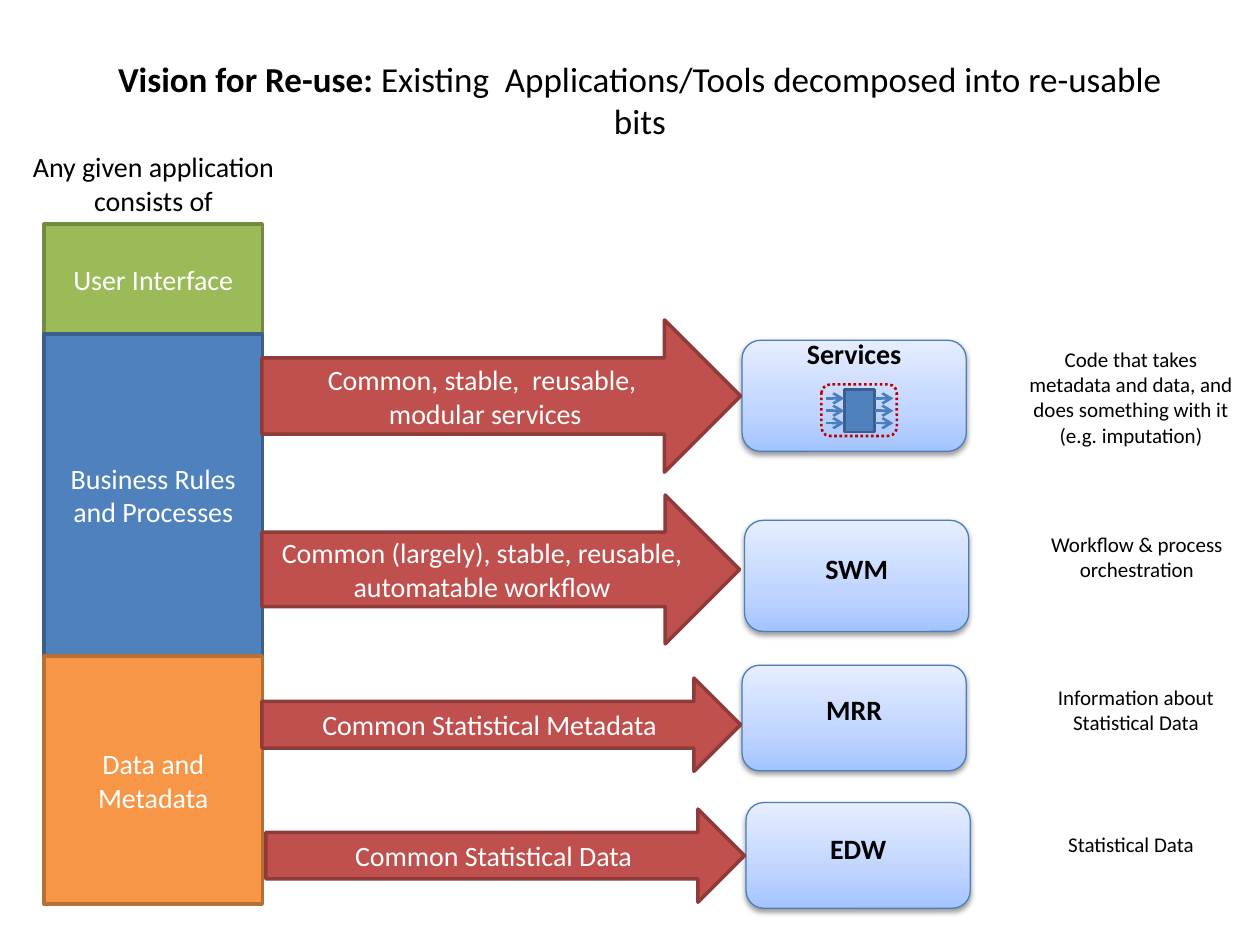
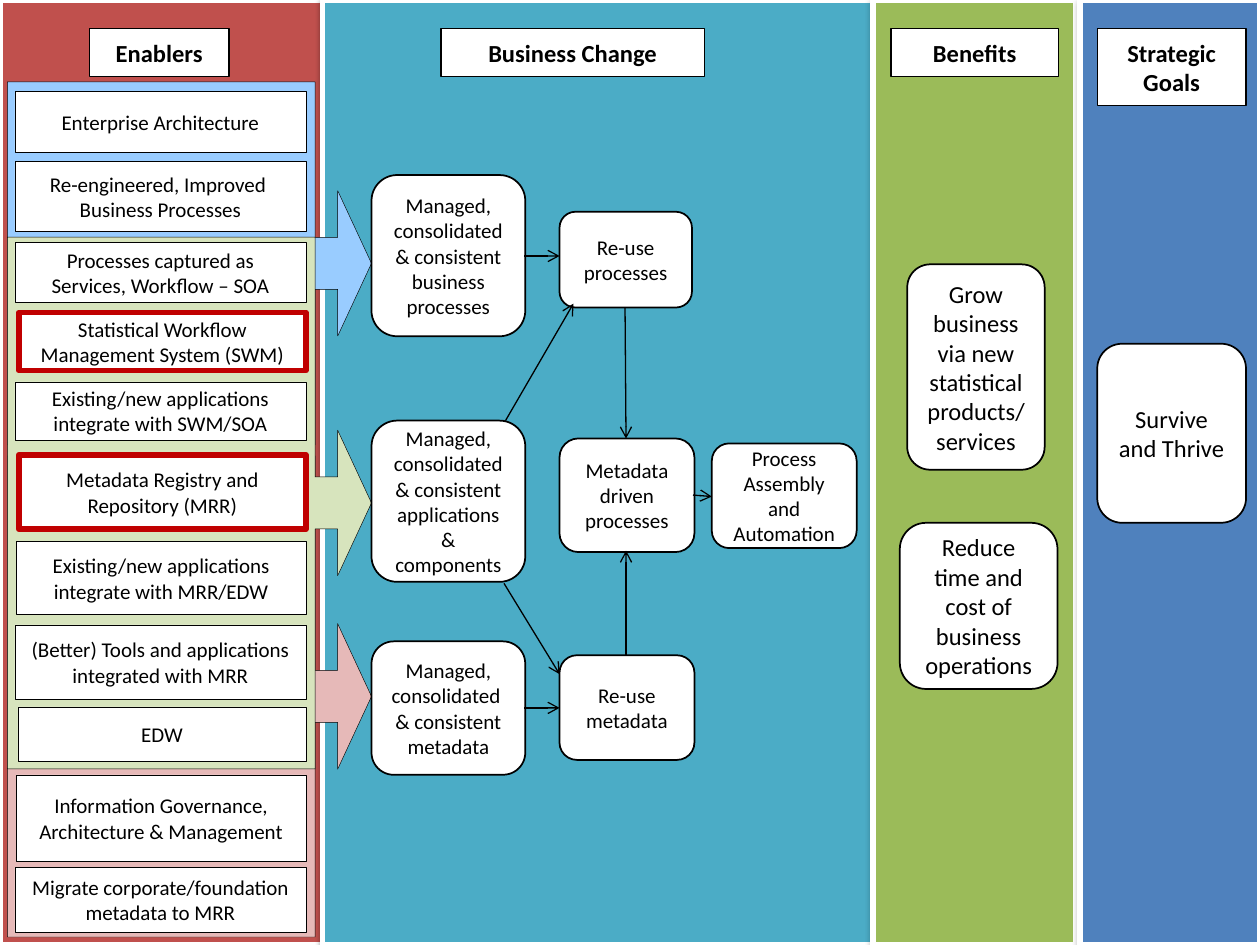
from copy import deepcopy

from lxml.etree import SubElement
from pptx import Presentation
from pptx.dml.color import RGBColor
from pptx.enum.dml import MSO_LINE as Dash
from pptx.enum.shapes import MSO_CONNECTOR as Connector, MSO_SHAPE as Preset
from pptx.enum.text import MSO_ANCHOR as Anchor, MSO_AUTO_SIZE as AutoSize, PP_ALIGN as Align
from pptx.oxml.ns import qn
from pptx.util import Cm, Pt

FONT = "Calibri"
BLACK, WHITE = "000000", "FFFFFF"
RED, BLUE, GREEN, ORANGE, TEAL = "C0504D", "4F81BD", "9BBB59", "F79646", "4BACC6"
DARK_RED, DARK_BLUE, DARK_GREEN, DARK_ORANGE = "8E3B39", "3A5F8C", "738A42", "B76F34"
EDGE_BLUE, HIGHLIGHT = "4B7EBC", "C00000"
PALE_BLUE, PALE_PINK, PALE_GREEN = "99CCFF", "E6B9B8", "D7E4BD"
BOX_GRADIENT = [(0, "A4C4FF"), (0.35, "BFD4FF"), (1, "E6EEFF")]


def color(value):
    return RGBColor.from_string(value)


class SlideBuilder:
    def __init__(self):
        self.presentation = Presentation()
        self.presentation.slide_width = Cm(25.4)
        self.presentation.slide_height = Cm(19.05)
        self.slide = None

    def new_slide(self, layout_index):
        layout = self.presentation.slide_layouts[layout_index]
        self.slide = self.presentation.slides.add_slide(layout)

    def fill_text(self, frame, paragraphs, size, ink=BLACK, anchor=Anchor.TOP):
        frame.word_wrap = True
        frame.auto_size = AutoSize.NONE
        frame.vertical_anchor = anchor
        for index, runs in enumerate(paragraphs):
            paragraph = frame.add_paragraph() if index else frame.paragraphs[0]
            paragraph.alignment = Align.CENTER
            for words, bold in runs:
                run = paragraph.add_run()
                run.text = words
                run.font.name = FONT
                run.font.size = Pt(size)
                run.font.bold = bold
                run.font.color.rgb = color(ink)

    def title(self, place, runs, size):
        title = self.slide.shapes.title
        title.left, title.top, title.width, title.height = map(Cm, place)
        self.fill_text(title.text_frame, [runs], size)

    def text(self, place, words, size, bold=False):
        box = self.slide.shapes.add_textbox(*map(Cm, place))
        self.fill_text(box.text_frame, [[(words, bold)]], size)

    def shape(self, preset, place, fill, line, width, words=None, size=16,
              ink=BLACK, bold=False, anchor=Anchor.MIDDLE):
        shape = self.slide.shapes.add_shape(preset, *map(Cm, place))
        shape.shadow.inherit = False
        if fill:
            shape.fill.solid()
            shape.fill.fore_color.rgb = color(fill)
        else:
            shape.fill.background()
        shape.line.color.rgb = color(line)
        shape.line.width = Pt(width)
        if words:
            paragraphs = [[(part, bold)] for part in words.split("\n")]
            self.fill_text(shape.text_frame, paragraphs, size, ink, anchor)
        return shape

    def shadow(self, shape):
        effects = shape.element.spPr.find(qn("a:effectLst"))
        outer = SubElement(effects, qn("a:outerShdw"), blurRad="40000", dist="20000",
                           dir="5400000", rotWithShape="0")
        tint = SubElement(outer, qn("a:srgbClr"), val=BLACK)
        SubElement(tint, qn("a:alpha"), val="38000")

    def gradient_box(self, place):
        box = self.shape(Preset.ROUNDED_RECTANGLE, place, WHITE, EDGE_BLUE, 0.75)
        box.fill.gradient()
        box.fill.gradient_angle = 90
        stops = box.element.spPr.find(".//" + qn("a:gsLst"))
        stops.append(deepcopy(stops[0]))
        for stop, (position, value) in zip(box.fill.gradient_stops, BOX_GRADIENT):
            stop.position = position
            stop.color.rgb = color(value)
        self.shadow(box)

    def panel(self, left, width, fill):
        self.shadow(self.shape(Preset.RECTANGLE, (left, 0, width, 19.05), fill, WHITE, 3))

    def header(self, place, words):
        header = self.shape(Preset.RECTANGLE, place, WHITE, BLACK, 0.75, words, 14,
                            bold=True, anchor=Anchor.TOP)
        frame = header.text_frame
        frame.margin_left = frame.margin_right = Cm(0.36)
        frame.margin_top = frame.margin_bottom = Cm(0.18)

    def callout(self, top, height, fill):
        callout = self.shape(Preset.RIGHT_ARROW_CALLOUT, (0.15, top, 7.34, height),
                             fill, BLACK, 0.25)
        for index, value in enumerate((0.143, 0.2, 0.093, 0.845)):
            callout.adjustments[index] = value

    def node(self, place, words, size=12):
        self.shape(Preset.ROUNDED_RECTANGLE, place, WHITE, BLACK, 1, words, size)

    def arrow(self, ends, line=BLACK, width=0.75):
        arrow = self.slide.shapes.add_connector(Connector.STRAIGHT, *map(Cm, ends))
        arrow.line.color.rgb = color(line)
        arrow.line.width = Pt(width)
        properties = arrow.element.spPr
        SubElement(properties.find(qn("a:ln")), qn("a:tailEnd"), type="arrow")
        SubElement(properties, qn("a:effectLst"))


def build_reuse_vision(builder):
    builder.new_slide(5)
    builder.title((1.7, 1.04, 22.4, 1.96), [
        ("Vision for Re-use: ", True),
        ("Existing  Applications/Tools decomposed into re-usable bits", False)], 20)
    builder.text((-0.41, 2.9, 7.01, 1.63), "Any given application consists of", 16)

    layers = [
        ("User Interface", 2.21, GREEN, DARK_GREEN),
        ("Business Rules and Processes", 6.5, BLUE, DARK_BLUE),
        ("Data and Metadata", 5, ORANGE, DARK_ORANGE),
    ]
    top = 4.52
    for words, height, fill, line in layers:
        builder.shape(Preset.RECTANGLE, (0.89, top, 4.4, height), fill, line, 2, words, ink=WHITE)
        top += height

    rows = [
        ("Common, stable,  reusable,\n modular services", (5.28, 6.45, 9.65, 3.07),
         "Services", (14.96, 6.86, 4.52, 2.24), 6.65,
         "Code that takes metadata and data, and does something with it (e.g. imputation)",
         (20.5, 6.86, 4.6, 2.31)),
        ("Common (largely), stable, reusable, automatable workflow", (5.28, 9.98, 9.63, 3),
         "SWM", (15.01, 10.49, 4.52, 2.24), 11,
         "Workflow & process orchestration", (20.62, 10.59, 4.6, 1.27)),
        ("Common Statistical Metadata", (5.28, 13.67, 9.65, 1.88),
         "MRR", (14.96, 13.41, 4.52, 2.13), 13.84,
         "Information about Statistical Data", (20.6, 13.67, 4.6, 1.27)),
        ("Common Statistical Data", (5.36, 16.31, 9.65, 1.88),
         "EDW", (15.04, 16.18, 4.52, 2.13), 16.64,
         "Statistical Data", (20.5, 16.64, 4.6, 0.76)),
    ]
    for flow, flow_place, name, box_place, name_top, description, description_place in rows:
        builder.gradient_box(box_place)
        builder.text((box_place[0], name_top, box_place[2], 0.94), name, 16, True)
        builder.shape(Preset.RIGHT_ARROW, flow_place, RED, DARK_RED, 2, flow, ink=WHITE)
        builder.text(description_place, description, 12)

    builder.shape(Preset.RECTANGLE, (17.02, 7.85, 0.61, 0.86), BLUE, DARK_BLUE, 1.5)
    for start, end in ((16.66, 17.02), (17.63, 18.01)):
        for index in range(3):
            height = 8.03 + 0.25 * index
            builder.arrow((start, height, end, height), EDGE_BLUE, 1.5)
    frame = builder.shape(Preset.ROUNDED_RECTANGLE, (16.56, 7.75, 1.52, 1.04),
                          None, HIGHLIGHT, 1.5)
    frame.line.dash_style = Dash.ROUND_DOT


def build_strategy_map(builder):
    builder.new_slide(6)
    columns = [
        (0, 6.5, RED, "Enablers", 1.8, 2.82, 0.97),
        (6.5, 11.1, TEAL, "Business Change", 8.89, 5.31, 0.97),
        (17.6, 4.09, GREEN, "Benefits", 17.96, 3.38, 0.97),
        (21.77, 3.63, BLUE, "Strategic Goals", 22.12, 3, 1.55),
    ]
    for left, width, fill, *_ in columns:
        builder.panel(left, width, fill)
    for *_, words, left, width, height in columns:
        builder.header((left, 0.58, width, height), words)

    for top, height, fill in ((1.65, 7.32, PALE_BLUE), (9.19, 9.7, PALE_PINK),
                              (4.78, 10.72, PALE_GREEN)):
        builder.callout(top, height, fill)

    enablers = [
        ("Enterprise Architecture", 0.3, 1.85, 1.22),
        ("Re-engineered, Improved  Business Processes", 0.3, 3.25, 1.42),
        ("Processes captured as Services, Workflow – SOA", 0.3, 4.88, 1.22),
        ("Existing/new applications integrate with SWM/SOA", 0.3, 7.7, 1.17),
        ("Existing/new applications integrate with MRR/EDW", 0.33, 10.92, 1.47),
        ("(Better) Tools and applications integrated with MRR", 0.3, 12.6, 1.5),
        ("EDW", 0.36, 14.25, 1.09),
        ("Information Governance, Architecture & Management", 0.33, 15.62, 1.75),
        ("Migrate corporate/foundation metadata to MRR", 0.3, 17.48, 1.32),
    ]
    key_systems = [
        ("Statistical Workflow Management System (SWM)", 0.38, 6.3, 1.17),
        ("Metadata Registry and Repository (MRR)", 0.38, 9.17, 1.5),
    ]
    for items, line, weight in ((enablers, BLACK, 0.25), (key_systems, HIGHLIGHT, 3.25)):
        for words, left, top, height in items:
            builder.shape(Preset.RECTANGLE, (left, top, 6.17 - left, height),
                          WHITE, line, weight, words, 12)

    changes = [
        ("Managed, consolidated & consistent business processes", (7.49, 3.53, 3.1, 3.25)),
        ("Managed, consolidated & consistent applications & components",
         (7.49, 8.48, 3.1, 3.25)),
        ("Managed, consolidated  & consistent metadata", (7.49, 12.93, 3.1, 2.69)),
        ("Re-use processes", (11.28, 4.27, 2.67, 1.93)),
        ("Metadata driven processes", (11.28, 8.84, 2.72, 2.29)),
        ("Re-use metadata", (11.28, 13.21, 2.72, 2.11)),
        ("Process Assembly and\nAutomation", (14.35, 8.94, 2.92, 2.11)),
    ]
    outcomes = [
        ("Grow business via new statistical products/services", (18.29, 5.33, 2.77, 4.14)),
        ("Reduce time and cost of business operations", (18.14, 10.54, 3.18, 3.35)),
        ("Survive and Thrive", (22.12, 6.93, 3, 3.61)),
    ]
    for nodes, size in ((changes, 12), (outcomes, 14)):
        for words, place in nodes:
            builder.node(place, words, size)

    for ends in (
        (10.57, 5.16, 11.28, 5.16),
        (10.57, 14.27, 11.28, 14.27),
        (13.97, 9.98, 14.35, 10.01),
        (12.6, 6.2, 12.62, 8.84),
        (12.62, 13.21, 12.62, 11.1),
        (10.19, 8.48, 11.56, 6.12),
        (10.16, 11.76, 11.28, 13.59),
    ):
        builder.arrow(ends)


def main():
    builder = SlideBuilder()
    build_reuse_vision(builder)
    build_strategy_map(builder)
    builder.presentation.save("out.pptx")


if __name__ == "__main__":
    main()
